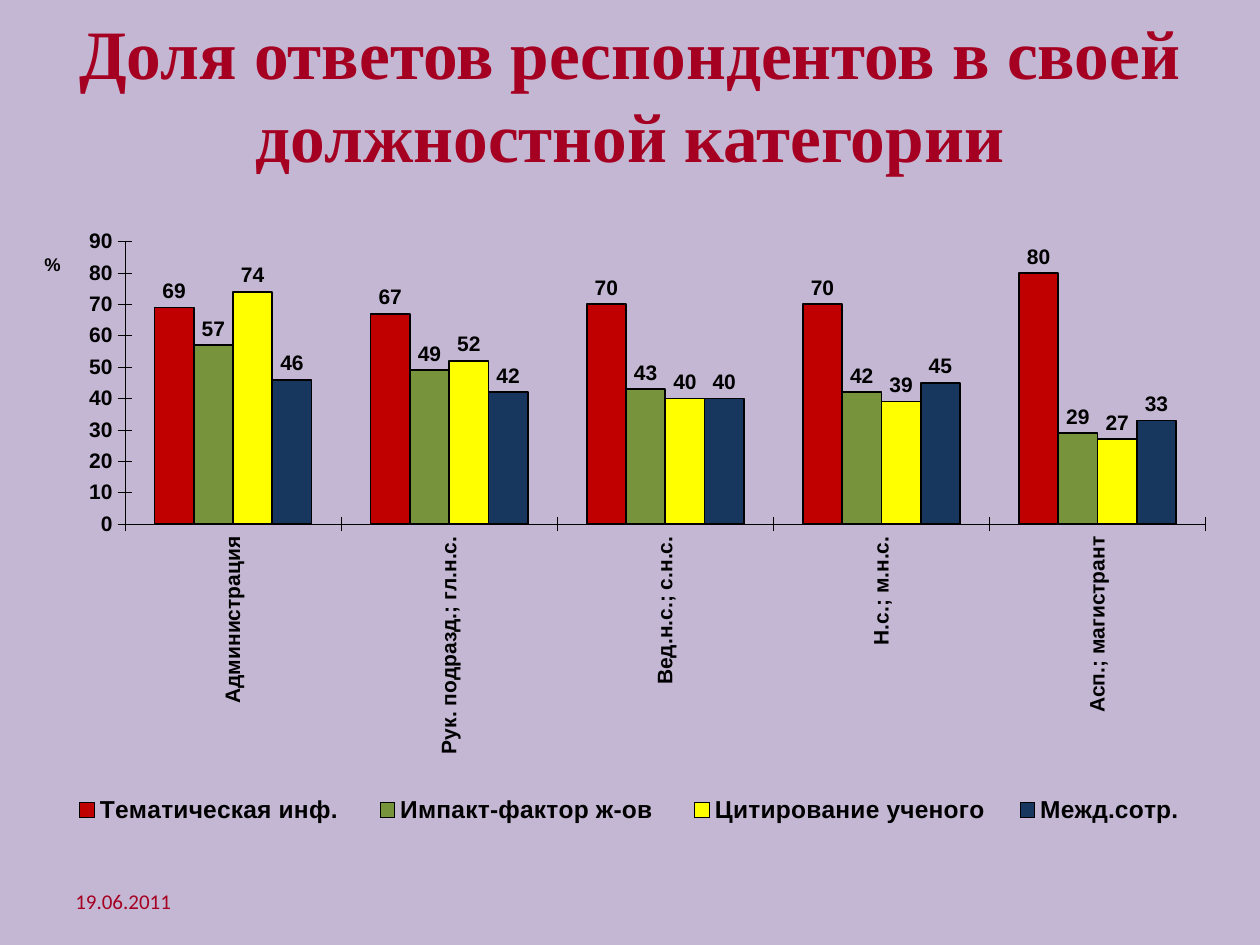
from lxml import etree
from pptx import Presentation
from pptx.chart.data import CategoryChartData
from pptx.dml.color import RGBColor
from pptx.enum.chart import XL_CHART_TYPE, XL_LABEL_POSITION, XL_LEGEND_POSITION, XL_TICK_MARK
from pptx.enum.text import MSO_ANCHOR, PP_ALIGN
from pptx.oxml.ns import qn
from pptx.util import Inches, Pt

COLUMNS = XL_CHART_TYPE.COLUMN_CLUSTERED
OUTSIDE_END = XL_LABEL_POSITION.OUTSIDE_END
BOTTOM = XL_LEGEND_POSITION.BOTTOM
CROSS, NO_TICK = XL_TICK_MARK.CROSS, XL_TICK_MARK.NONE
MIDDLE, CENTER = MSO_ANCHOR.MIDDLE, PP_ALIGN.CENTER

WIDTH, HEIGHT = 10, 7.5
BACKGROUND, ACCENT, BLACK = "C4B7D4", "A50021", "000000"

TITLE = "Доля ответов респондентов в своей должностной категории"
DATE = "19.06.2011"
CATEGORIES = ["Администрация", "Рук. подразд.; гл.н.с.", "Вед.н.с.; с.н.с.",
              "Н.с.; м.н.с.", "Асп.; магистрант"]
SERIES = [
    ("Тематическая инф. ", "C00000", (69, 67, 70, 70, 80)),
    ("Импакт-фактор ж-ов ", "77933C", (57, 49, 43, 42, 29)),
    ("Цитирование ученого", "FFFF00", (74, 52, 40, 39, 27)),
    ("Межд.сотр.", "17375E", (46, 42, 40, 45, 33)),
]

# Left, top, width, height in inches
TITLE_BOX = (0, 0, WIDTH, 1.48)
CHART_BOX = (0.23, 1.48, 9.53, 5.47)
DATE_BOX = (0.5, 6.95, 2.33, 0.4)
# Shares of the chart's size
PLOT_AREA = {"x": 0.08, "y": 0.08, "w": 0.9, "h": 0.41}
AXIS_TITLE = {"x": 0.01, "y": 0.09}
LEGEND = {"x": 0.02, "y": 0.88, "w": 0.96, "h": 0.05}


def color(value):
    return RGBColor.from_string(value)


def set_font(font, size, name="Arial", fill=BLACK, bold=True):
    font.size, font.name, font.bold = Pt(size), name, bold
    font.color.rgb = color(fill)


def set_line(line, width):
    line.color.rgb = color(BLACK)
    line.width = Pt(width)


def set_layout(element, index, shares, inner=False):
    """Place a chart part by shares of the chart; index is its layout's child position."""
    for old in element.findall(qn("c:layout")):
        element.remove(old)
    layout = etree.Element(qn("c:layout"))
    element.insert(index, layout)
    manual = etree.SubElement(layout, qn("c:manualLayout"))
    settings = [("layoutTarget", "inner")] if inner else []
    settings += [("xMode", "edge"), ("yMode", "edge"), *shares.items()]
    for tag, value in settings:
        etree.SubElement(manual, qn(f"c:{tag}")).set("val", str(value))


def add_title(slide):
    title = slide.shapes.title
    title.left, title.top, title.width, title.height = map(Inches, TITLE_BOX)
    frame = title.text_frame
    frame.text, frame.vertical_anchor = TITLE, MIDDLE
    paragraph = frame.paragraphs[0]
    paragraph.alignment = CENTER
    set_font(paragraph.font, 39.6, "Times New Roman", ACCENT)


def add_date(slide):
    frame = slide.shapes.add_textbox(*map(Inches, DATE_BOX)).text_frame
    frame.word_wrap, frame.vertical_anchor = True, MIDDLE
    frame.text = DATE
    set_font(frame.paragraphs[0].font, 12, "Calibri", ACCENT, False)


def style_axes(chart):
    for axis in (chart.category_axis, chart.value_axis):
        axis.has_major_gridlines = False
        axis.major_tick_mark, axis.minor_tick_mark = CROSS, NO_TICK
        set_font(axis.tick_labels.font, 12)
        set_line(axis.format.line, 0.25)
    labels_body = chart.category_axis.tick_labels.font._element.getparent().getparent().getparent()
    labels_body.find(qn("a:bodyPr")).set("rot", "-5400000")

    value_axis = chart.value_axis
    value_axis.minimum_scale, value_axis.maximum_scale = 0, 90
    value_axis.major_unit = 10
    value_axis.tick_labels.number_format = "0"
    value_axis.tick_labels.number_format_is_linked = False
    title = value_axis.axis_title
    title.text_frame.text = "%"
    set_font(title.text_frame.paragraphs[0].font, 10.5)
    title.text_frame._txBody.find(qn("a:bodyPr")).set("rot", "0")
    set_layout(title._element, 1, AXIS_TITLE)


def add_chart(slide):
    data = CategoryChartData(number_format="0")
    data.categories = CATEGORIES
    for name, _, values in SERIES:
        data.add_series(name, values)
    chart = slide.shapes.add_chart(COLUMNS, *map(Inches, CHART_BOX), data).chart
    chart.has_title = False
    set_font(chart.font, 10.5, bold=False)
    style_axes(chart)

    plot = chart.plots[0]
    plot.gap_width, plot.overlap, plot.vary_by_categories = 150, 0, False
    for series, (_, fill, _) in zip(plot.series, SERIES):
        series.format.fill.solid()
        series.format.fill.fore_color.rgb = color(fill)
        series.invert_if_negative = False
        set_line(series.format.line, 1)
        labels = series.data_labels
        labels.show_value, labels.position = True, OUTSIDE_END
        labels.number_format, labels.number_format_is_linked = "0", False
        set_font(labels.font, 12)

    chart.has_legend = True
    chart.legend.position, chart.legend.include_in_layout = BOTTOM, False
    set_font(chart.legend.font, 14)
    set_layout(chart.legend._element, 1, LEGEND)
    set_layout(chart._chartSpace.chart.plotArea, 0, PLOT_AREA, inner=True)


def main():
    presentation = Presentation()
    presentation.slide_width, presentation.slide_height = Inches(WIDTH), Inches(HEIGHT)
    slide = presentation.slides.add_slide(presentation.slide_layouts[5])
    slide.background.fill.solid()
    slide.background.fill.fore_color.rgb = color(BACKGROUND)
    add_title(slide)
    add_chart(slide)
    add_date(slide)
    presentation.save("out.pptx")


if __name__ == "__main__":
    main()
